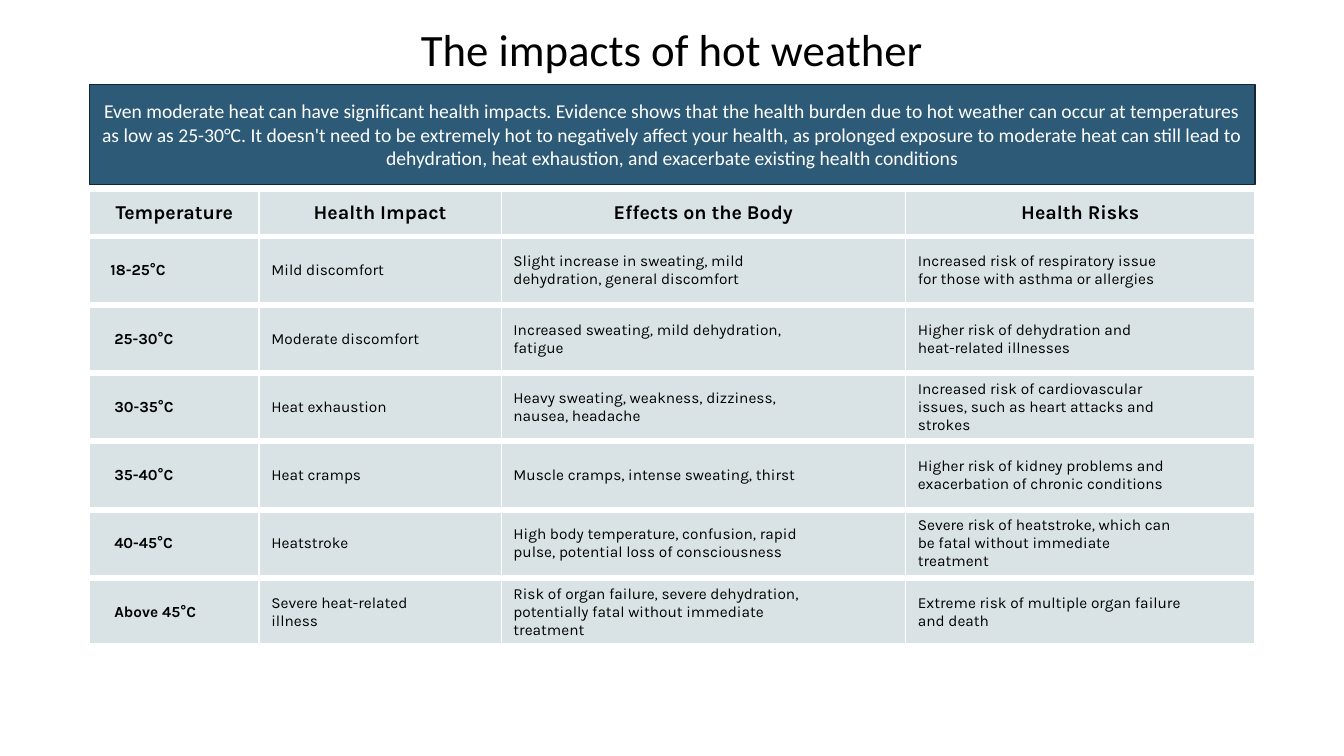
from dataclasses import dataclass

from lxml.etree import SubElement
from pptx import Presentation
from pptx.dml.color import RGBColor as RGB
from pptx.enum.shapes import MSO_SHAPE as Shape
from pptx.enum.text import MSO_ANCHOR as Anchor, MSO_AUTO_SIZE as AutoSize, PP_ALIGN as Align
from pptx.oxml.ns import qn
from pptx.util import Cm, Pt

TITLE = "The impacts of hot weather"
SUMMARY = (
    "Even moderate heat can have significant health impacts. Evidence shows that the health "
    "burden due to hot weather can occur at temperatures as low as 25-30°C. It doesn't need to "
    "be extremely hot to negatively affect your health, as prolonged exposure to moderate heat "
    "can still lead to dehydration, heat exhaustion, and exacerbate existing health conditions"
)
HEADINGS = ["Temperature", "Health Impact", "Effects on the Body", "Health Risks"]
# Each line of a cell is a paragraph of its own.
LEVELS = [
    ("18-25°C", "Mild discomfort",
     "Slight increase in sweating, mild\ndehydration, general discomfort",
     "Increased risk of respiratory issue\nfor those with asthma or allergies"),
    ("25-30°C", "Moderate discomfort",
     "Increased sweating, mild dehydration,\nfatigue",
     "Higher risk of dehydration and\nheat-related illnesses"),
    ("30-35°C", "Heat exhaustion",
     "Heavy sweating, weakness, dizziness,\nnausea, headache",
     "Increased risk of cardiovascular\nissues, such as heart attacks and\nstrokes"),
    ("35-40°C", "Heat cramps",
     "Muscle cramps, intense sweating, thirst",
     "Higher risk of kidney problems and\nexacerbation of chronic conditions"),
    ("40-45°C", "Heatstroke",
     "High body temperature, confusion, rapid\npulse, potential loss of consciousness",
     "Severe risk of heatstroke, which can\nbe fatal without immediate\ntreatment"),
    ("Above 45°C", "Severe heat-related\nillness",
     "Risk of organ failure, severe dehydration,\npotentially fatal without immediate\ntreatment",
     "Extreme risk of multiple organ failure\nand death"),
]


@dataclass(frozen=True)
class Theme:
    text: RGB = RGB(0x00, 0x00, 0x00)
    white: RGB = RGB(0xFF, 0xFF, 0xFF)
    cell: RGB = RGB(0xD9, 0xE3, 0xE5)
    banner: RGB = RGB(0x2C, 0x5A, 0x77)
    banner_line: RGB = RGB(0x13, 0x27, 0x34)
    main_font: str = "Calibri"
    table_font: str = "Karla"
    title_size: int = 32
    lead_size: int = 14
    cell_size: int = 11


THEME = Theme()
SLIDE_W, SLIDE_H = 33.87, 19.05
LEFT = 2.26
COLUMNS = [4.27, 6.1, 10.19, 8.81]
WIDTH = sum(COLUMNS)
HEADER_TOP, HEADER_H = 4.83, 1.09
ROWS_TOP, ROW_H, ROW_PITCH = 6.02, 1.6, 1.72
INSET, TEXT_INDENT, LEVEL_INDENT, FIRST_LEVEL_INDENT = 0.03, 0.31, 0.62, 0.52


def add_run(p, text, font, size, color, bold=False):
    r = p.add_run()
    r.text = text
    r.font.name, r.font.size, r.font.bold = font, Pt(size), bold
    r.font.color.rgb = color


def add_borders(cell):
    tc_pr = cell._tc.get_or_add_tcPr()
    for side in ("a:lnL", "a:lnR", "a:lnT", "a:lnB"):
        line = SubElement(tc_pr, qn(side), w=str(Pt(1)))
        fill = SubElement(line, qn("a:solidFill"))
        SubElement(fill, qn("a:srgbClr"), val=str(THEME.white))


def fill_cell(cell, text, size, bold, align, indent):
    add_borders(cell)
    cell.fill.solid()
    cell.fill.fore_color.rgb = THEME.cell
    cell.vertical_anchor = Anchor.MIDDLE
    cell.margin_left = Cm(indent)
    cell.margin_right = cell.margin_top = cell.margin_bottom = Cm(INSET)
    tf = cell.text_frame
    for i, line in enumerate(text.split("\n")):
        p = tf.add_paragraph() if i else tf.paragraphs[0]
        p.alignment = align
        add_run(p, line, THEME.table_font, size, THEME.text, bold)


def add_strip(s, top, height):
    """Add a one-row table and return its cells."""
    table = s.shapes.add_table(
        1, len(COLUMNS), Cm(LEFT), Cm(top), Cm(WIDTH), Cm(height)).table
    table.first_row = table.horz_banding = False
    table.rows[0].height = Cm(height)
    for column, width in zip(table.columns, COLUMNS):
        column.width = Cm(width)
    return table.rows[0].cells


def add_title(s):
    sp = s.shapes.title
    sp.left, sp.top, sp.width, sp.height = Cm(0), Cm(0.48), Cm(SLIDE_W), Cm(1.65)
    tf = sp.text_frame
    tf.auto_size, tf.vertical_anchor = AutoSize.NONE, Anchor.MIDDLE
    p = tf.paragraphs[0]
    p.alignment, p.line_spacing = Align.CENTER, 0.9
    add_run(p, TITLE, THEME.main_font, THEME.title_size, THEME.text)


def add_banner(s):
    sp = s.shapes.add_shape(Shape.RECTANGLE, Cm(LEFT), Cm(2.13), Cm(WIDTH), Cm(2.52))
    sp.shadow.inherit = False
    sp.fill.solid()
    sp.fill.fore_color.rgb = THEME.banner
    sp.line.color.rgb, sp.line.width = THEME.banner_line, Pt(1)
    tf = sp.text_frame
    tf.word_wrap, tf.vertical_anchor = True, Anchor.MIDDLE
    p = tf.paragraphs[0]
    p.alignment, p.space_after = Align.CENTER, Pt(6)
    add_run(p, SUMMARY, THEME.main_font, THEME.lead_size, THEME.white)


def add_levels(s):
    for cell, heading in zip(add_strip(s, HEADER_TOP, HEADER_H), HEADINGS):
        fill_cell(cell, heading, THEME.lead_size, True, Align.CENTER, INSET)
    for i, level in enumerate(LEVELS):
        cells = add_strip(s, ROWS_TOP + i * ROW_PITCH, ROW_H)
        for j, (cell, text) in enumerate(zip(cells, level)):
            level_indent = LEVEL_INDENT if i else FIRST_LEVEL_INDENT
            indent = TEXT_INDENT if j else level_indent
            fill_cell(cell, text, THEME.cell_size, j == 0, Align.LEFT, indent)


def main():
    prs = Presentation()
    prs.slide_width, prs.slide_height = Cm(SLIDE_W), Cm(SLIDE_H)
    s = prs.slides.add_slide(prs.slide_layouts.get_by_name("Title Only"))
    add_title(s)
    add_banner(s)
    add_levels(s)
    prs.save("out.pptx")


if __name__ == "__main__":
    main()
